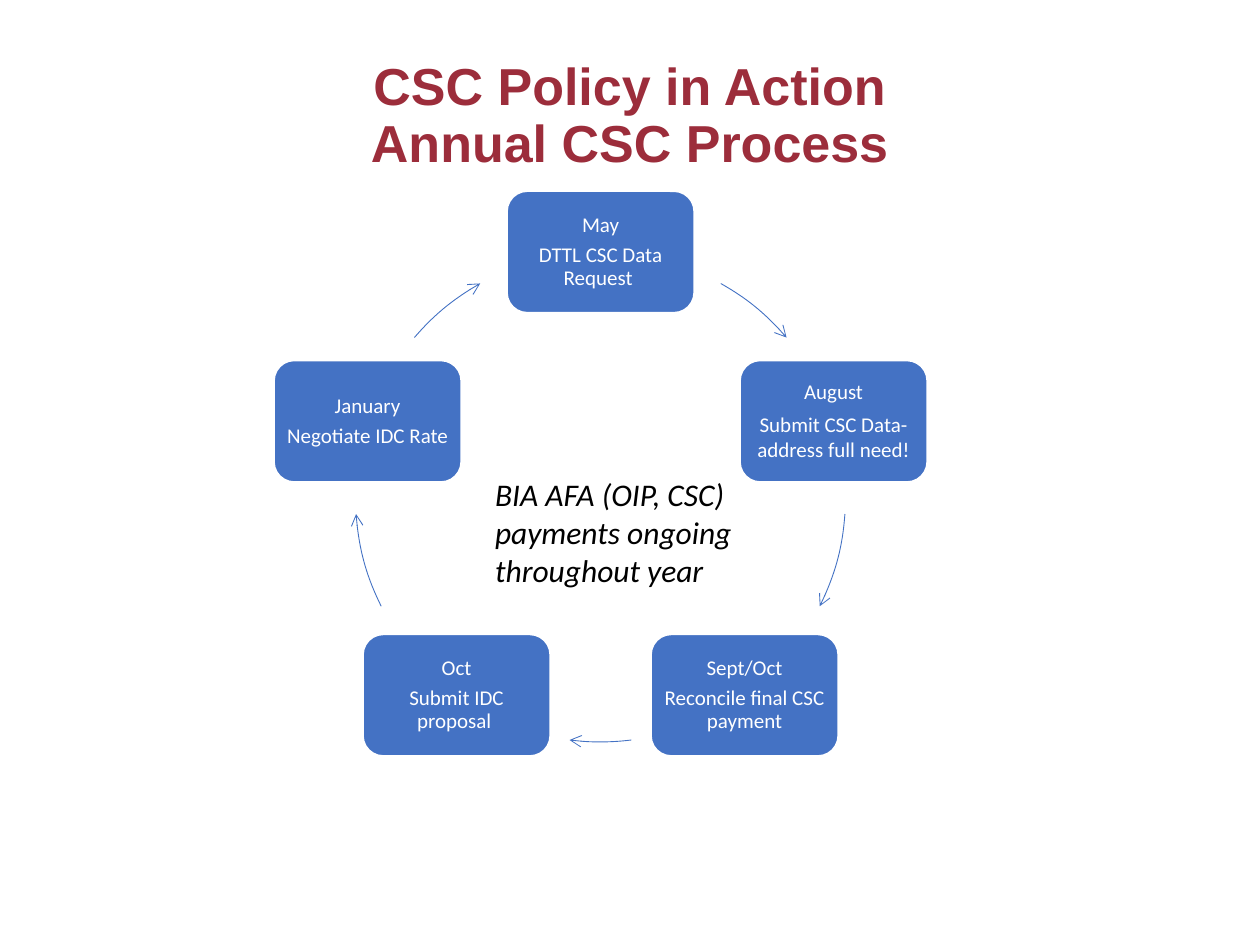
from dataclasses import dataclass
from math import cos, radians, sin

from lxml.etree import SubElement
from pptx import Presentation
from pptx.dml.color import RGBColor
from pptx.enum.shapes import MSO_SHAPE as Shape
from pptx.enum.text import MSO_ANCHOR as Anchor, PP_ALIGN as Align
from pptx.oxml.ns import qn
from pptx.util import Pt


@dataclass(frozen=True)
class Theme:
    title_color: str = "9C2D3B"
    step_color: str = "4472C4"
    step_text: str = "FFFFFF"
    note_color: str = "000000"
    title_font: str = "Arial"
    body_font: str = "Calibri"
    title_size: float = 29.7
    step_size: float = 12
    note_size: float = 18


class CycleSlide:
    def __init__(self, slide, theme):
        self.slide = slide
        self.theme = theme

    def add_run(self, paragraph, text, font, size, color, bold=False, italic=False):
        run = paragraph.add_run()
        run.text = text
        run.font.name, run.font.size = font, Pt(size)
        run.font.bold, run.font.italic = bold, italic
        run.font.color.rgb = RGBColor.from_string(color)

    def text_frame(self, left, top, width, height):
        box = self.slide.shapes.add_textbox(Pt(left), Pt(top), Pt(width), Pt(height))
        box.text_frame.word_wrap = True
        return box.text_frame

    def title(self, lines, left, top, width, height):
        frame = self.text_frame(left, top, width, height)
        frame.vertical_anchor = Anchor.TOP
        frame.margin_top = Pt(6)
        heading = frame.paragraphs[0]
        heading.alignment, heading.line_spacing = Align.CENTER, 0.9
        for index, line in enumerate(lines):
            if index:
                heading.add_line_break()
            self.add_run(heading, line, self.theme.title_font, self.theme.title_size,
                         self.theme.title_color, bold=True)

    def note(self, text, left, top, width, height):
        frame = self.text_frame(left, top, width, height)
        self.add_run(frame.paragraphs[0], text, self.theme.body_font,
                     self.theme.note_size, self.theme.note_color, italic=True)

    def step(self, month, task, task_spacing, center_x, center_y, width, height):
        card = self.slide.shapes.add_shape(
            Shape.ROUNDED_RECTANGLE, Pt(center_x - width / 2), Pt(center_y - height / 2),
            Pt(width), Pt(height))
        card.shadow.inherit = False
        card.fill.solid()
        card.fill.fore_color.rgb = RGBColor.from_string(self.theme.step_color)
        card.line.color.rgb = RGBColor.from_string(self.theme.step_text)
        card.line.width = Pt(1)
        frame = card.text_frame
        frame.word_wrap, frame.vertical_anchor = True, Anchor.MIDDLE
        frame.margin_left = frame.margin_right = Pt(3.4)
        frame.margin_top = frame.margin_bottom = Pt(3.4)
        month_line, task_line = frame.paragraphs[0], frame.add_paragraph()
        month_line.space_after = Pt(4.2)
        for paragraph, text, spacing in ((month_line, month, 0.9),
                                         (task_line, task, task_spacing)):
            paragraph.alignment, paragraph.line_spacing = Align.CENTER, spacing
            self.add_run(paragraph, text, self.theme.body_font,
                         self.theme.step_size, self.theme.step_text)

    def arc_arrow(self, center_x, center_y, radius, start, end):
        arc = self.slide.shapes.add_shape(
            Shape.ARC, Pt(center_x - radius), Pt(center_y - radius),
            Pt(2 * radius), Pt(2 * radius))
        arc.shadow.inherit = False
        arc.fill.background()
        # Arc angles are 60000ths of a degree; adjustments are scaled by 100000
        arc.adjustments[0], arc.adjustments[1] = start * 0.6, end * 0.6
        arc.line.color.rgb = RGBColor.from_string(self.theme.step_color)
        arc.line.width = Pt(0.5)
        SubElement(arc.line._get_or_add_ln(), qn("a:tailEnd"), type="arrow")


def main():
    deck = Presentation()
    deck.slide_width, deck.slide_height = Pt(720), Pt(540)
    page = CycleSlide(deck.slides.add_slide(deck.slide_layouts[6]), Theme())

    # Heading
    page.title(["CSC Policy in Action", "Annual CSC Process"], 49.5, 28.8, 621, 104.4)

    # Yearly cycle, clockwise from the top: month, task, task line spacing, arrow angles
    center_x, center_y, radius = 343.2, 284, 140
    steps = [
        ("May", "DTTL CSC Data Request ", 0.9, (299.4, 319.4)),
        ("August", "Submit CSC Data-address full need!", 1, (4, 26.5)),
        ("Sept/Oct", "Reconcile final CSC payment", 0.9, (82.75, 97.25)),
        ("Oct", "Submit IDC proposal ", 0.9, (153.5, 176)),
        ("January", "Negotiate IDC Rate", 0.9, (220.6, 240.6)),
    ]
    for index, (month, task, spacing, (start, end)) in enumerate(steps):
        angle = radians(index * 360 / len(steps) - 90)
        page.step(month, task, spacing, center_x + radius * cos(angle),
                  center_y + radius * sin(angle), 107, 69.5)
        page.arc_arrow(center_x, center_y, radius, start, end)

    # Note inside the cycle
    page.note("BIA AFA (OIP, CSC) payments ongoing throughout year", 275.8, 268, 154, 72.7)

    deck.save("out.pptx")


if __name__ == "__main__":
    main()
